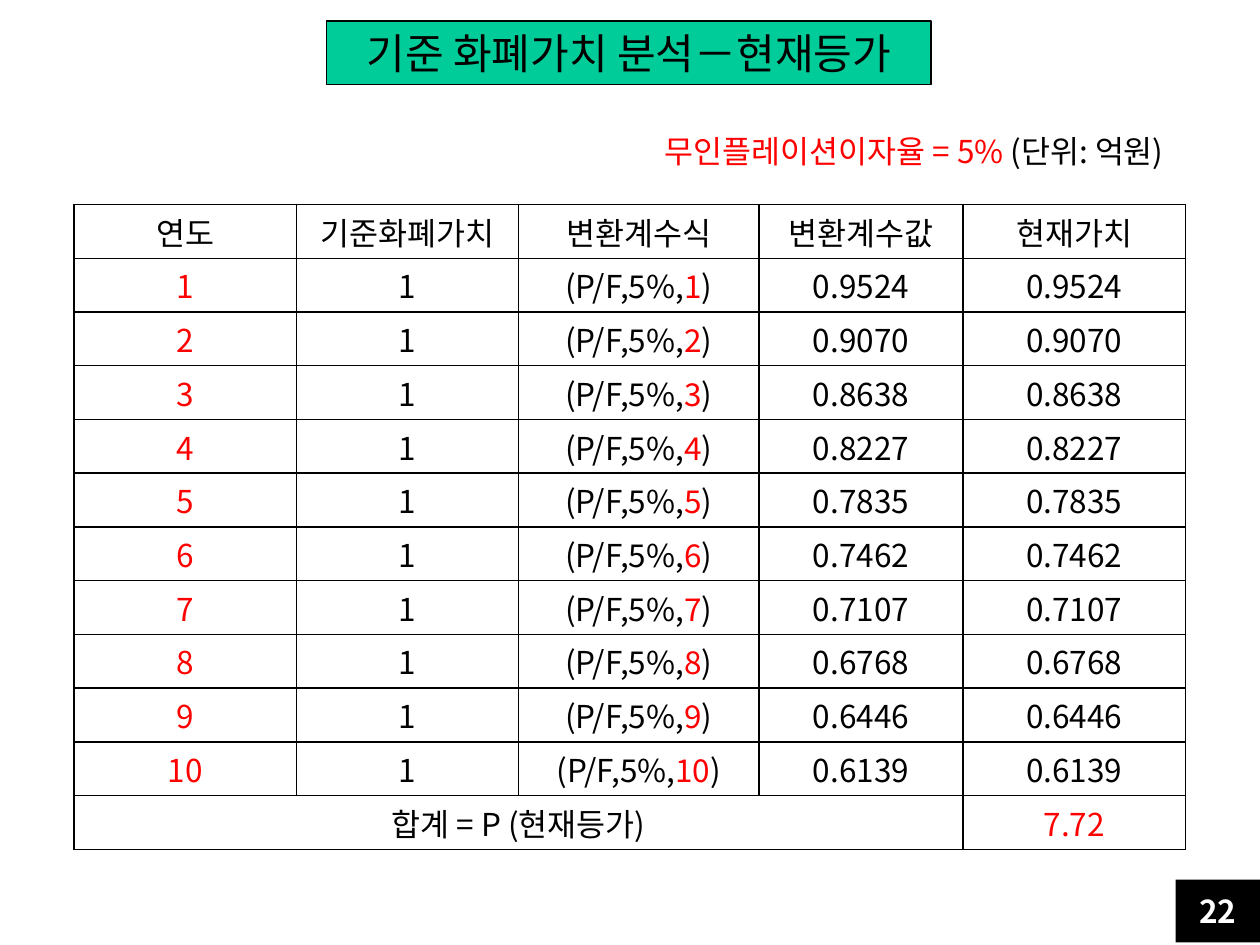
from lxml import etree
from pptx import Presentation
from pptx.dml.color import RGBColor
from pptx.enum.shapes import MSO_SHAPE
from pptx.enum.text import MSO_ANCHOR, PP_ALIGN
from pptx.oxml.ns import qn
from pptx.util import Pt

RECTANGLE = MSO_SHAPE.RECTANGLE
MIDDLE = MSO_ANCHOR.MIDDLE
CENTER = PP_ALIGN.CENTER

FONT = "Noto Sans CJK KR"
BLACK = RGBColor(0x00, 0x00, 0x00)
WHITE = RGBColor(0xFF, 0xFF, 0xFF)
RED = RGBColor(0xFF, 0x00, 0x00)
GREEN = RGBColor(0x00, 0xCC, 0x99)


def add_text(frame, text, color=BLACK, size=18, bold=False):
    """Add a centred run to the frame's first paragraph."""
    frame.vertical_anchor = MIDDLE
    para = frame.paragraphs[0]
    para.alignment = CENTER
    span = para.add_run()
    span.text = text
    span.font.name = FONT
    span.font.size = Pt(size)
    span.font.bold = bold
    span.font.color.rgb = color
    etree.SubElement(span.font._element, qn("a:ea"), typeface=FONT)


def format_cell(cell, side_inset):
    cell.margin_left = cell.margin_right = Pt(side_inset)
    cell.margin_top = cell.margin_bottom = 0
    properties = cell._tc.get_or_add_tcPr()
    for side in ("a:lnL", "a:lnR", "a:lnT", "a:lnB"):
        border = etree.SubElement(properties, qn(side), w=str(Pt(1)))
        fill = etree.SubElement(border, qn("a:solidFill"))
        etree.SubElement(fill, qn("a:srgbClr"), val=str(BLACK))
    cell.fill.background()


deck = Presentation()
deck.slide_width, deck.slide_height = Pt(720), Pt(540)
page = deck.slides.add_slide(deck.slide_layouts[6])

# Page number
number_box = page.shapes.add_shape(RECTANGLE, Pt(671.8), Pt(502.6), Pt(48.2), Pt(36))
number_box.shadow.inherit = False
number_box.fill.solid()
number_box.fill.fore_color.rgb = BLACK
number_box.line.fill.background()
add_text(number_box.text_frame, "22", color=WHITE, bold=True)

# Interest rate and unit
rate_box = page.shapes.add_textbox(Pt(342.7), Pt(72), Pt(359.3), Pt(28.8))
rate_box.text_frame.word_wrap = True
add_text(rate_box.text_frame, "무인플레이션이자율 = 5% ", color=RED)
add_text(rate_box.text_frame, "(단위: 억원)")

# Title
title_box = page.shapes.add_shape(RECTANGLE, Pt(186.5), Pt(12), Pt(345.6), Pt(36.2))
title_box.shadow.inherit = False
title_box.fill.solid()
title_box.fill.fore_color.rgb = GREEN
title_box.line.color.rgb = BLACK
title_box.line.width = Pt(0.75)
title_box.text_frame.word_wrap = False
add_text(title_box.text_frame, "기준 화폐가치 분석－현재등가", size=24)

# Present value table: each cell is a list of (text, colour) spans
headings = ["연도", "기준화폐가치", "변환계수식", "변환계수값", "현재가치"]
rows = [[[(heading, BLACK)] for heading in headings]]
for year in range(1, 11):
    factor = [(f"{1 / 1.05 ** year:.4f}", BLACK)]
    formula = [("(P/F,5%,", BLACK), (str(year), RED), (")", BLACK)]
    rows.append([[(str(year), RED)], [("1", BLACK)], formula, factor, factor])
rows.append([[("합계 = P (현재등가)", BLACK)], [], [], [], [("7.72", RED)]])

column_widths = [127, 127, 137.2, 116.8, 127]
row_height = 30.7
table = page.shapes.add_table(
    len(rows), len(column_widths), Pt(42.4), Pt(116.9),
    Pt(sum(column_widths)), Pt(row_height * len(rows)),
).table
table.first_row = table.horz_banding = False
for column, width in zip(table.columns, column_widths):
    column.width = Pt(width)
for row_index, row in enumerate(rows):
    table.rows[row_index].height = Pt(row_height)
    for column_index, spans in enumerate(row):
        cell = table.cell(row_index, column_index)
        is_value = column_index > 2 and 0 < row_index < len(rows) - 1
        format_cell(cell, 0.7 if is_value else 5)
        cell.vertical_anchor = MIDDLE
        for text, color in spans:
            add_text(cell.text_frame, text, color=color)
total_row = len(rows) - 1
table.cell(total_row, 0).merge(table.cell(total_row, 3))

deck.save("out.pptx")
